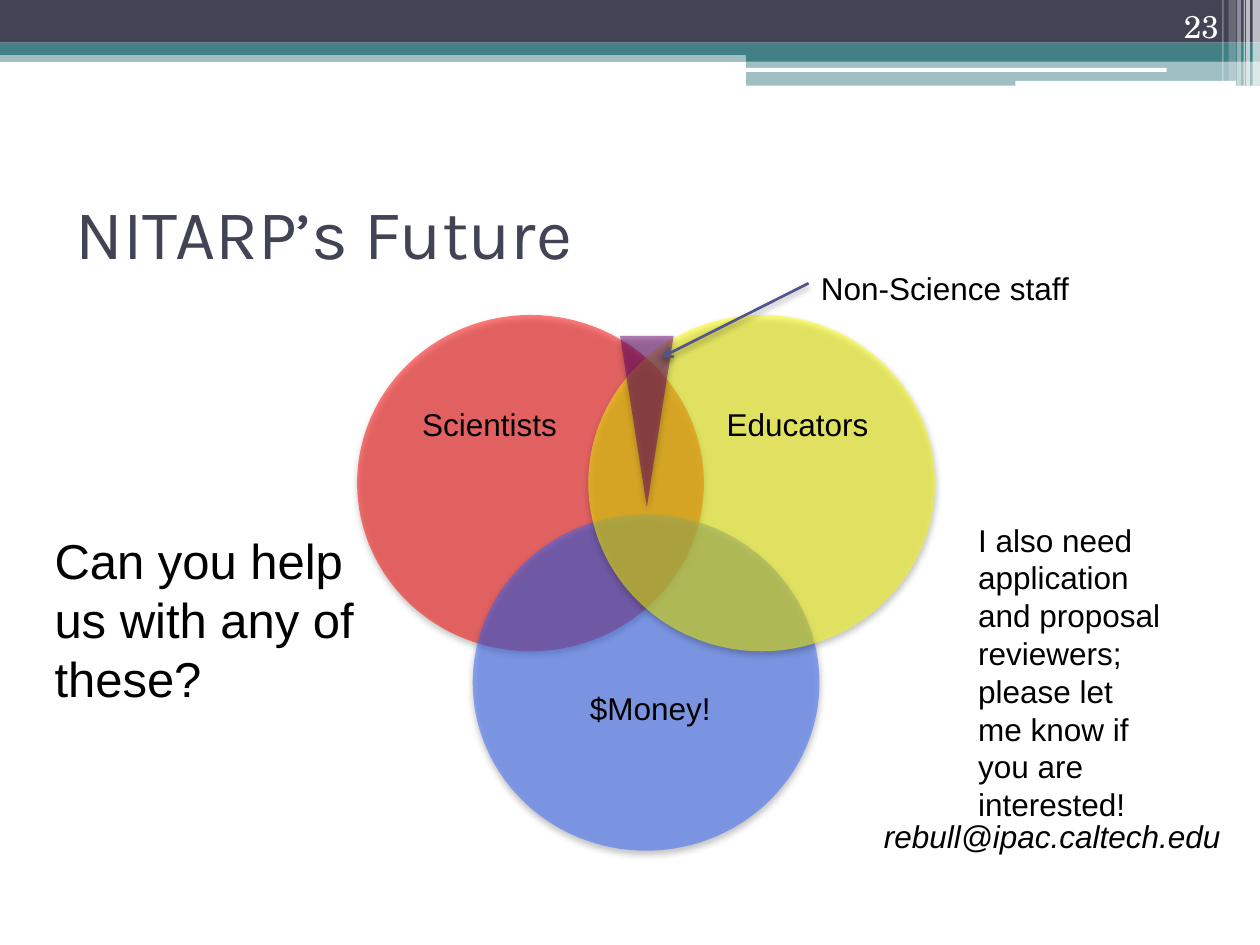
from lxml import etree
from pptx import Presentation
from pptx.dml.color import RGBColor
from pptx.enum.shapes import MSO_CONNECTOR, MSO_SHAPE
from pptx.enum.text import MSO_ANCHOR, MSO_AUTO_SIZE, PP_ALIGN
from pptx.oxml.ns import qn
from pptx.util import Cm, Pt

SLATE = RGBColor(0x42, 0x44, 0x56)
TEAL = RGBColor(0x43, 0x80, 0x86)
WHITE = RGBColor(0xFF, 0xFF, 0xFF)
BLACK = RGBColor(0x00, 0x00, 0x00)
RED = RGBColor(0xFF, 0x00, 0x00)
BLUE = RGBColor(0x33, 0x66, 0xFF)
YELLOW = RGBColor(0xFF, 0xFF, 0x00)
PURPLE = RGBColor(0x66, 0x00, 0x66)
INDIGO = RGBColor(0x53, 0x54, 0x8A)

SLIDE_W = 25.4
TAB_LEFT, TAB_W = 15.04, 10.36
CIRCLE_W, CIRCLE_H = 6.99, 6.78


def add_alpha(color, percent):
    etree.SubElement(color, qn("a:alpha"), val=str(percent * 1000))


def add_shadow(effects, alpha):
    """Fill an a:effectLst with a soft black shadow that falls downwards."""
    shadow = etree.SubElement(
        effects, qn("a:outerShdw"), blurRad=str(Pt(4)), dist=str(Pt(2)),
        dir="5400000", rotWithShape="0")
    color = etree.SubElement(shadow, qn("a:srgbClr"), val=str(BLACK))
    add_alpha(color, alpha)


def add_filled(slide, kind, left, top, width, height, color, alpha=100):
    sp = slide.shapes.add_shape(kind, Cm(left), Cm(top), Cm(width), Cm(height))
    sp.fill.solid()
    sp.fill.fore_color.rgb = color
    sp.line.fill.background()
    sp.shadow.inherit = False
    if alpha < 100:
        add_alpha(sp._element.spPr.find(".//" + qn("a:srgbClr")), alpha)
    return sp


def add_shaded(slide, kind, left, top, width, height, color):
    """Add a half-transparent shape with a shadow."""
    sp = add_filled(slide, kind, left, top, width, height, color, 50)
    add_shadow(sp._element.spPr.find(qn("a:effectLst")), 45)


def add_text(slide, text, left, top, width, height, size=18, wrap=False,
             font="Arial", color=BLACK, italic=False):
    box = slide.shapes.add_textbox(Cm(left), Cm(top), Cm(width), Cm(height))
    tf = box.text_frame
    tf.word_wrap = wrap
    tf.auto_size = MSO_AUTO_SIZE.SHAPE_TO_FIT_TEXT
    tf.text = text
    set_font(tf.paragraphs[0], font, size, color, italic)
    return tf


def set_font(p, name, size, color, italic=False):
    p.font.name = name
    p.font.size = Pt(size)
    p.font.color.rgb = color
    p.font.italic = italic


def add_arrow(slide, tip, tail):
    """Draw a shadowed line whose open arrowhead is at tip."""
    line = slide.shapes.add_connector(
        MSO_CONNECTOR.STRAIGHT, *(Cm(v) for v in tip + tail))
    line.line.color.rgb = INDIGO
    line.line.width = Pt(1.5)
    etree.SubElement(line.line._get_or_add_ln(), qn("a:headEnd"), type="arrow")
    effects = etree.SubElement(line._element.spPr, qn("a:effectLst"))
    add_shadow(effects, 40)


def add_banner(slide):
    rect, rounded = MSO_SHAPE.RECTANGLE, MSO_SHAPE.ROUNDED_RECTANGLE
    for kind, left, top, width, height, color, alpha in (
        (rect, 0, 1.02, SLIDE_W, 0.23, TEAL, 50),
        (rect, 0, 0, SLIDE_W, 0.86, SLATE, 100),
        (rect, 0, 0.86, SLIDE_W, 0.25, TEAL, 100),
        (rect, TAB_LEFT, 0.99, TAB_W, 0.25, TEAL, 100),
        (rect, TAB_LEFT, 1.23, TAB_W, 0.5, TEAL, 50),
        (rounded, 15.01, 1.37, 8.51, 0.08, WHITE, 100),
        (rounded, 20.47, 1.63, 4.45, 0.1, WHITE, 100),
    ):
        add_filled(slide, kind, left, top, width, height, color, alpha)
    for left, width, height, alpha in (
        (25.25, 0.15, 1.73, 65),
        (25.12, 0.08, 1.73, 65),
        (25.07, 0.03, 1.73, 60),
        (24.94, 0.08, 1.73, 40),
        (24.77, 0.15, 1.63, 20),
        (24.64, 0.03, 1.63, 30),
    ):
        add_filled(slide, rect, left, 0, width, height, WHITE, alpha)


def add_title(slide, text):
    title = slide.shapes.title
    title.left, title.top = Cm(1.27), Cm(3.18)
    title.width, title.height = Cm(22.86), Cm(2.97)
    tf = title.text_frame
    tf.text = text
    tf.vertical_anchor = MSO_ANCHOR.MIDDLE
    p = tf.paragraphs[0]
    p.alignment = PP_ALIGN.LEFT
    set_font(p, "Karla", 40, SLATE)


def add_slide_number(slide, number):
    tf = add_text(slide, number, 22.71, 0, 2.11, 1.02, wrap=True,
                  font="TeX Gyre Schola", color=WHITE)
    tf.auto_size = MSO_AUTO_SIZE.NONE
    tf.vertical_anchor = MSO_ANCHOR.BOTTOM
    tf.paragraphs[0].alignment = PP_ALIGN.RIGHT


def add_venn(slide):
    for left, top, color in (
        (7.2, 6.35, RED), (9.53, 10.37, BLUE), (11.86, 6.35, YELLOW),
    ):
        add_shaded(slide, MSO_SHAPE.OVAL, left, top, CIRCLE_W, CIRCLE_H, color)
    add_text(slide, "Scientists", 8.26, 8.04, 3.25, 1.02)
    add_text(slide, "Educators", 14.4, 8.04, 3.4, 1.02)
    add_text(slide, "$Money!", 11.64, 13.76, 2.97, 1.02)


def add_staff_callout(slide):
    add_shaded(slide, MSO_SHAPE.FLOWCHART_MERGE, 12.5, 6.77, 1.08, 3.45, PURPLE)
    add_arrow(slide, (13.34, 7.2), (16.3, 5.71))
    add_text(slide, "Non-Science staff", 16.3, 5.29, 5.61, 1.02)


def main():
    prs = Presentation()
    prs.slide_width, prs.slide_height = Cm(SLIDE_W), Cm(19.05)
    slide = prs.slides.add_slide(prs.slide_layouts[5])
    add_banner(slide)
    add_title(slide, "NITARP’s Future")
    add_slide_number(slide, "23")
    add_venn(slide)
    add_staff_callout(slide)
    add_text(slide, "Can you help us with any of these?",
             0.85, 10.58, 6.56, 3.84, size=28, wrap=True)
    add_text(slide, "I also need application and proposal reviewers; "
             "please let me know if you are interested!",
             19.47, 10.37, 4.23, 6.4, wrap=True)
    add_text(slide, "rebull@ipac.caltech.edu", 17.57, 16.34, 7.52, 1.02,
             italic=True)
    prs.save("out.pptx")


if __name__ == "__main__":
    main()
